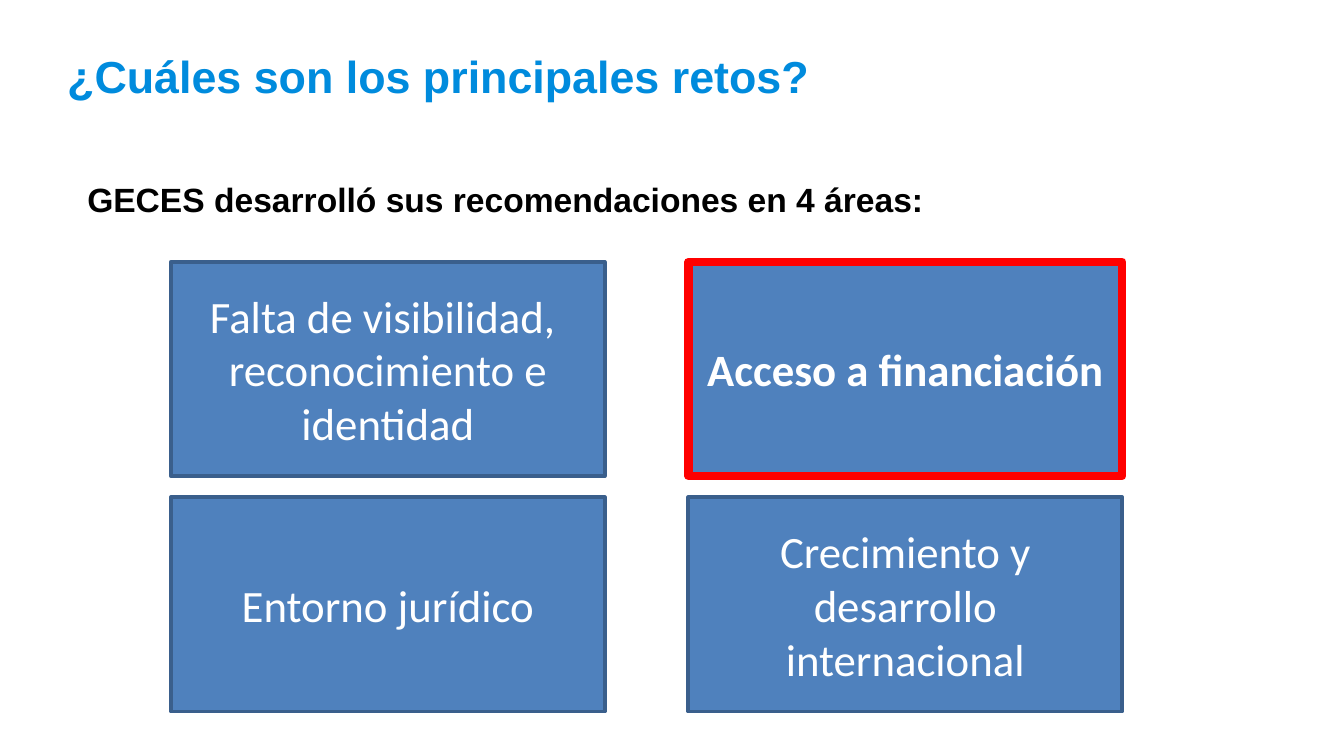
from dataclasses import dataclass

from pptx import Presentation
from pptx.dml.color import RGBColor as RGB
from pptx.enum.shapes import MSO_SHAPE as Shape
from pptx.enum.text import MSO_ANCHOR as Anchor, MSO_AUTO_SIZE as AutoSize, PP_ALIGN as Align
from pptx.util import Cm, Pt


@dataclass(frozen=True)
class Theme:
    title: RGB = RGB(0x00, 0x8B, 0xDD)
    text: RGB = RGB(0x00, 0x00, 0x00)
    box: RGB = RGB(0x4F, 0x81, 0xBD)
    border: RGB = RGB(0x3A, 0x5F, 0x8C)
    highlight: RGB = RGB(0xFF, 0x00, 0x00)
    box_text: RGB = RGB(0xFF, 0xFF, 0xFF)
    large: Pt = Pt(24)
    medium: Pt = Pt(18)
    heading_font: str = "Arial"
    box_font: str = "Calibri"


THEME = Theme()

# Challenge areas in reading order: text, highlighted
AREAS = [
    ("Falta de visibilidad, \vreconocimiento e identidad", False),
    ("Acceso a financiación", True),
    ("Entorno jurídico", False),
    ("Crecimiento y desarrollo internacional", False),
]
COLUMNS = 2
GRID_LEFT, GRID_TOP = 3.23, 4.95
BOX_W, BOX_H = 8.2, 4.05
STEP_X, STEP_Y = 9.78, 4.45


def set_all(obj, formats):
    for name, value in formats.items():
        setattr(obj, name, value)


def write(tf, text, color, align=Align.LEFT, **font):
    """Fill a text frame with one formatted paragraph."""
    tf.word_wrap = True
    p = tf.paragraphs[0]
    p.text = text
    p.alignment = align
    for r in p.runs:
        set_all(r.font, font)
        r.font.color.rgb = color


def add_title(s, text):
    sp = s.shapes.title
    set_all(sp, {"left": Cm(1.27), "top": Cm(0.53), "width": Cm(21.64), "height": Cm(1.8)})
    tf = sp.text_frame
    set_all(tf, {"margin_left": 0, "margin_right": 0, "vertical_anchor": Anchor.MIDDLE,
                 "auto_size": AutoSize.NONE})
    write(tf, text, THEME.title, size=THEME.large, name=THEME.heading_font, bold=True)


def add_intro(s, text):
    sp = s.shapes.add_textbox(Cm(1.4), Cm(3.25), Cm(21.92), Cm(1.03))
    sp.text_frame.auto_size = AutoSize.SHAPE_TO_FIT_TEXT
    write(sp.text_frame, text, THEME.text,
          size=THEME.medium, name=THEME.heading_font, bold=True)


def add_area(s, index, text, highlighted):
    row, col = divmod(index, COLUMNS)
    sp = s.shapes.add_shape(Shape.RECTANGLE, Cm(GRID_LEFT + col * STEP_X),
                            Cm(GRID_TOP + row * STEP_Y), Cm(BOX_W), Cm(BOX_H))
    sp.shadow.inherit = False
    sp.fill.solid()
    sp.fill.fore_color.rgb = THEME.box
    sp.line.color.rgb = THEME.highlight if highlighted else THEME.border
    sp.line.width = Pt(4.5 if highlighted else 2)
    sp.text_frame.vertical_anchor = Anchor.MIDDLE
    write(sp.text_frame, text, THEME.box_text, Align.CENTER,
          size=THEME.large, name=THEME.box_font, bold=highlighted)


def main():
    prs = Presentation()
    set_all(prs, {"slide_width": Cm(25.4), "slide_height": Cm(14.29)})
    s = prs.slides.add_slide(prs.slide_layouts[5])

    # Heading and introduction
    add_title(s, "¿Cuáles son los principales retos?")
    add_intro(s, "GECES desarrolló sus recomendaciones en 4 áreas:")

    # Grid of challenge areas
    for index, (text, highlighted) in enumerate(AREAS):
        add_area(s, index, text, highlighted)

    prs.save("out.pptx")


if __name__ == "__main__":
    main()
